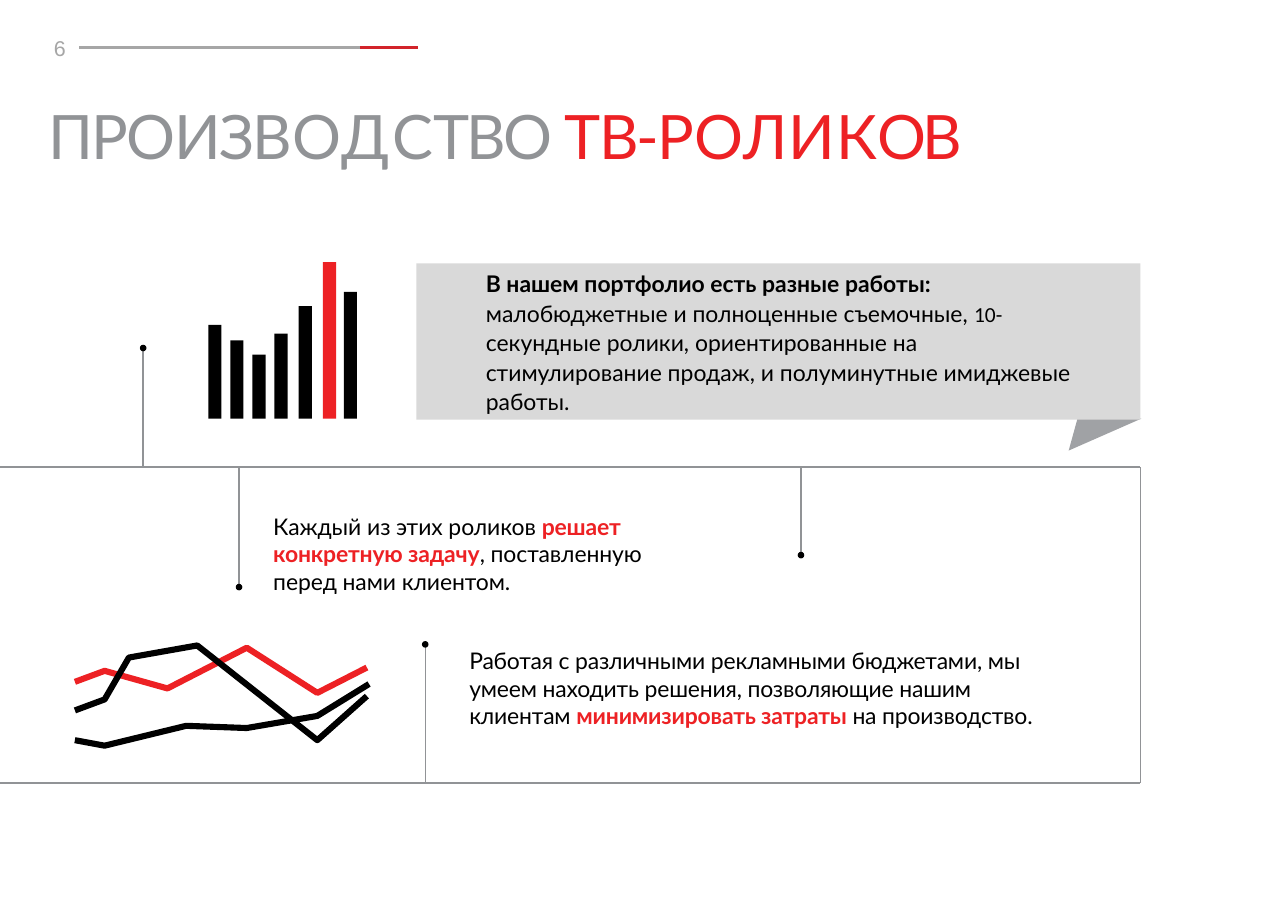
from dataclasses import dataclass

from lxml.etree import SubElement
from pptx import Presentation
from pptx.dml.color import RGBColor
from pptx.enum.shapes import MSO_CONNECTOR as CONN, MSO_SHAPE as SHAPE
from pptx.enum.text import MSO_ANCHOR as ANCHOR, MSO_AUTO_SIZE as AUTO, PP_ALIGN as ALIGN
from pptx.oxml.ns import qn
from pptx.util import Inches, Pt


@dataclass(frozen=True)
class Theme:
    black: str = "000000"
    red: str = "ED2124"
    dark_red: str = "D2232A"
    gray: str = "919396"
    light_gray: str = "A6A6A6"
    tail_gray: str = "A0A2A5"
    panel: str = "D9D9D9"
    font: str = "Lato"
    number_font: str = "Arial"
    digit_font: str = "Calibri"
    title_size: float = 40
    body_size: float = 15
    small_size: float = 14
    hairline: float = 1
    rule: float = 1.75
    trend: float = 4


THEME = Theme()


def rgb(color):
    return RGBColor.from_string(color)


def write(p, text, font=THEME.font, size=THEME.body_size, color=THEME.black,
          bold=False, spc=0):
    """Add one formatted run; spc is the letter spacing in points."""
    r = p.add_run()
    r.text = text
    r.font.name, r.font.size, r.font.bold = font, Pt(size), bold
    r.font.color.rgb = rgb(color)
    if spc:
        r.font._element.set("spc", str(round(spc * 100)))


class Deck:
    def __init__(self, theme, slide):
        self.theme, self.slide = theme, slide
        self.shapes = slide.shapes

    def frame(self, sp, margins=(0, 0, 0, 0), anchor=ANCHOR.TOP):
        tf = sp.text_frame
        tf.word_wrap, tf.auto_size, tf.vertical_anchor = True, AUTO.NONE, anchor
        tf.margin_left, tf.margin_top, tf.margin_right, tf.margin_bottom = map(Inches, margins)
        p = tf.paragraphs[0]
        p.alignment = ALIGN.LEFT
        return p

    def title(self, box, runs):
        sp = self.shapes.title
        sp.left, sp.top, sp.width, sp.height = map(Inches, box)
        p = self.frame(sp)
        for text, color, spc in runs:
            write(p, text, size=self.theme.title_size, color=color, spc=spc)

    def text(self, box, runs):
        p = self.frame(self.shapes.add_textbox(*map(Inches, box)))
        for text, style in runs:
            write(p, text, **style)

    def shape(self, kind, box, color):
        sp = self.shapes.add_shape(kind, *map(Inches, box))
        sp.shadow.inherit = False
        sp.fill.solid()
        sp.fill.fore_color.rgb = rgb(color)
        sp.line.fill.background()
        return sp

    def panel(self, box, runs):
        sp = self.shape(SHAPE.RECTANGLE, box, self.theme.panel)
        p = self.frame(sp, (0.63, 0.05, 0.5, 0.05), ANCHOR.MIDDLE)
        p.line_spacing = 1.07
        for text, style in runs:
            write(p, text, **style)

    def line(self, x1, y1, x2, y2, color=THEME.gray, width=THEME.hairline):
        s = self.shapes.add_connector(CONN.STRAIGHT, *map(Inches, (x1, y1, x2, y2)))
        s.line.color.rgb = rgb(color)
        s.line.width = Pt(width)
        SubElement(s._element.spPr, qn("a:effectLst"))

    def pin(self, x, y_frame, y_dot, size=0.06):
        self.line(x, y_frame, x, y_dot)
        self.shape(SHAPE.OVAL, (x - size / 2, y_dot - size / 2, size, size), self.theme.black)

    def outline(self, points, color, closed=False):
        pts = [(Inches(x), Inches(y)) for x, y in points]
        fb = self.shapes.build_freeform(*pts[0], scale=1.0)
        fb.add_line_segments(pts[1:], close=closed)
        sp = fb.convert_to_shape()
        sp.shadow.inherit = False
        if closed:
            sp.fill.solid()
            sp.fill.fore_color.rgb = rgb(color)
            sp.line.fill.background()
        else:
            sp.fill.background()
            sp.line.color.rgb = rgb(color)
            sp.line.width = Pt(self.theme.trend)


def main():
    prs = Presentation()
    prs.slide_width, prs.slide_height = Inches(11.69), Inches(8.27)
    t = THEME
    deck = Deck(t, prs.slides.add_slide(prs.slide_layouts[5]))
    body = dict(spc=-0.05)
    accent = dict(color=t.red, bold=True, spc=-0.1)

    # Title
    deck.title((0.44, 0.89, 10.81, 0.67), [
        ("ПРОИЗВ", t.gray, -1.1), ("О", t.gray, -2), ("Д", t.gray, 2.2),
        ("С", t.gray, -3.7), ("ТВО ", t.gray, -1.9), ("ТВ-Р", t.red, -1.2),
        ("О", t.red, -2.4), ("ЛИ", t.red, 0.6), ("К", t.red, -0.3), ("ОВ", t.red, -2.2)])

    # Page number and progress rule
    deck.text((0.49, 0.32, 0.2, 0.24),
              [("6", dict(font=t.number_font, size=t.small_size, color=t.light_gray))])
    step = 0.51
    for i in range(6):
        x = 0.72 + i * step
        color = t.dark_red if i == 5 else t.light_gray
        deck.line(x, 0.43, x + 0.52, 0.43, color, t.rule)

    # Frame open to the left, with its pins
    top, bottom, right = 4.24, 7.11, 10.35
    deck.line(0, top, right, top)
    deck.line(0, bottom, right, bottom)
    deck.line(right, top, right, bottom)
    for x, y_frame, y_dot in [(1.3, top, 3.16), (2.17, top, 5.33),
                              (7.27, top, 5.04), (3.86, bottom, 5.85)]:
        deck.pin(x, y_frame, y_dot)

    # Bar icon
    base = 3.8
    bars = [(1.89, 0.85), (2.09, 0.71), (2.29, 0.58), (2.49, 0.77),
            (2.71, 1.02), (2.93, 1.42), (3.12, 1.15)]
    tallest = max(height for _, height in bars)
    for x, height in bars:
        color = t.red if height == tallest else t.black
        deck.shape(SHAPE.RECTANGLE, (x, base - height, 0.12, height), color)

    # Callout with its tail
    deck.outline([(10.36, 3.8), (9.78, 3.8), (9.7, 4.09)], t.tail_gray, closed=True)
    deck.panel((3.78, 2.39, 6.57, 1.42), [
        ("В нашем портфолио есть разные работы: ", dict(bold=True)),
        ("малобюджетные и полноценные съемочные, ", {}),
        ("10-", dict(font=t.digit_font, size=t.small_size)),
        ("секундные ролики, ориентированные на стимулирование продаж, "
         "и полуминутные имиджевые работы.", {})])

    # Statements inside the frame
    deck.text((2.48, 4.65, 3.55, 0.8), [
        ("Каждый из этих роликов ", body), ("решает конкретную задачу", accent),
        (", поставленную перед нами клиентом.", body)])
    deck.text((4.26, 5.87, 5.3, 0.8), [
        ("Работая с различными рекламными бюджетами, мы умеем находить решения, "
         "позволяющие нашим клиентам ", dict(spc=-0.1)),
        ("минимизировать затраты ", accent), ("на производство.", dict(spc=-0.1))])

    # Trend icon
    trends = [
        (t.red, [(3.33, 6.06), (2.88, 6.29), (2.24, 5.88), (1.52, 6.25),
                 (0.95, 6.09), (0.68, 6.19)]),
        (t.black, [(3.33, 6.32), (2.88, 6.72), (1.79, 5.86), (1.17, 5.97),
                   (0.95, 6.35), (0.68, 6.45)]),
        (t.black, [(3.35, 6.21), (2.88, 6.5), (2.24, 6.61), (1.69, 6.59),
                   (0.95, 6.77), (0.68, 6.72)])]
    for color, points in trends:
        deck.outline(points, color)

    prs.save("out.pptx")


if __name__ == "__main__":
    main()
